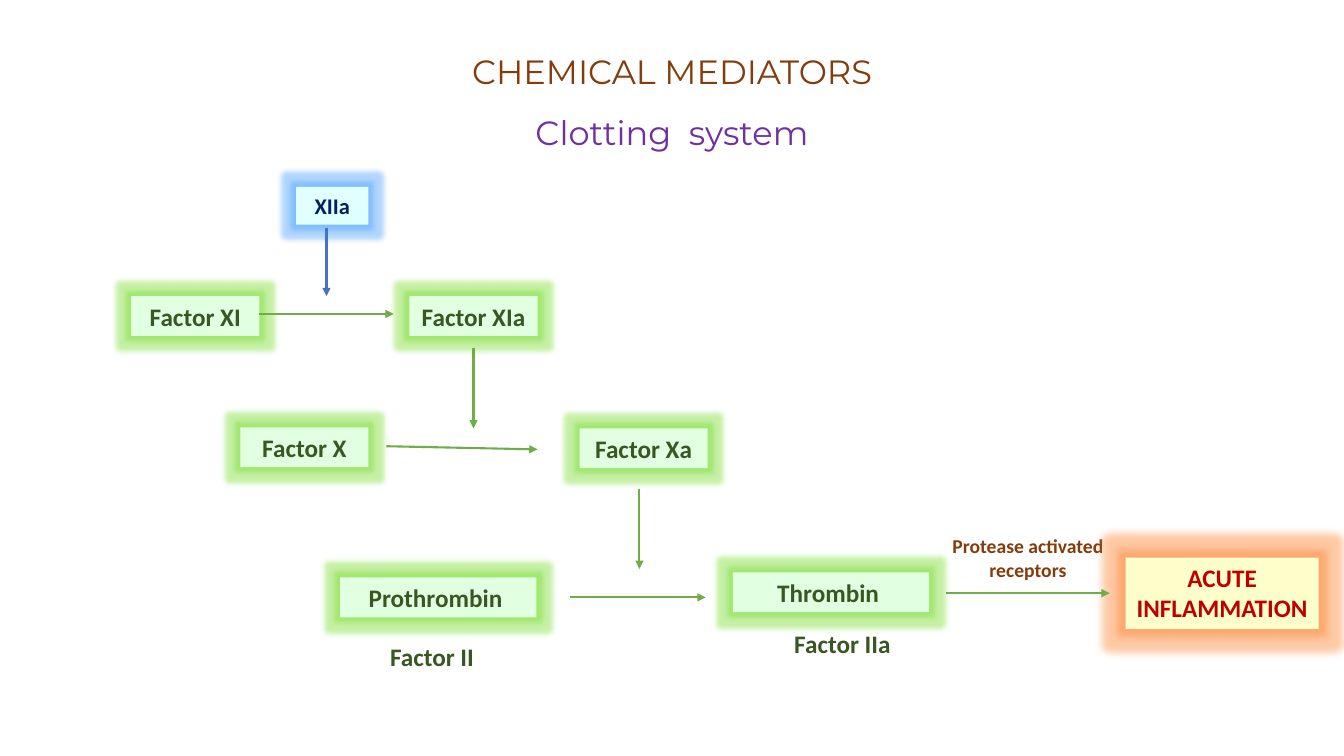
from lxml import etree
from pptx import Presentation
from pptx import util as u
from pptx.dml.color import RGBColor
from pptx.enum import shapes, text
from pptx.oxml.ns import qn

PX = 9525
GREEN, DARK_GREEN, BROWN = "70AD47", "385723", "843C0B"
FACTOR = {"fill": "E1FFE1", "ink": DARK_GREEN, "glow": "6FDB20"}
TRIGGER = {"fill": "E1FFFF", "ink": "002060", "glow": "3D9BFF", "size": 16}
RESULT = {"fill": "FFFFCC", "ink": "C00000", "glow": "FF7A1F", "reach": 15}


def px(length):
    """Turn whole pixels into EMU."""
    return u.Emu(length * PX)


def color(value):
    """Turn a hex string into a colour."""
    return RGBColor.from_string(value)


def add_span(para, words, size, ink, font="Calibri", bold=True):
    """Add one formatted run to a paragraph."""
    span = para.add_run()
    span.text = words
    span.font.size = u.Pt(size)
    span.font.name = font
    span.font.bold = bold
    span.font.color.rgb = color(ink)


def fill_frame(shape, words, size, ink, align):
    """Write one wrapped paragraph into a shape."""
    frame = shape.text_frame
    frame.word_wrap = True
    frame.auto_size = text.MSO_AUTO_SIZE.SHAPE_TO_FIT_TEXT
    frame.vertical_anchor = text.MSO_ANCHOR.TOP
    para = frame.paragraphs[0]
    para.alignment = align
    add_span(para, words, size, ink)


def add_label(page, box, words, size, ink, align=text.PP_ALIGN.LEFT):
    """Place a plain text label."""
    label = page.shapes.add_textbox(*map(px, box))
    fill_frame(label, words, size, ink, align)


def add_node(page, box, words, fill, ink, glow, size=18, reach=10):
    """Place a filled box surrounded by a soft glow."""
    node = page.shapes.add_shape(shapes.MSO_SHAPE.RECTANGLE, *map(px, box))
    node.shadow.inherit = False
    node.fill.solid()
    node.fill.fore_color.rgb = color(fill)
    node.line.fill.background()
    effects = node._element.spPr.find(qn("a:effectLst"))
    halo = etree.SubElement(effects, qn("a:glow"), rad=str(px(reach)))
    tint = etree.SubElement(halo, qn("a:srgbClr"), val=glow)
    etree.SubElement(tint, qn("a:alpha"), val="40000")
    fill_frame(node, words, size, ink, text.PP_ALIGN.CENTER)


def add_arrow(page, start, end, ink=GREEN):
    """Draw a straight arrow between two points."""
    arrow = page.shapes.add_connector(
        shapes.MSO_CONNECTOR.STRAIGHT, *map(px, (*start, *end)))
    arrow.line.color.rgb = color(ink)
    arrow.line.width = u.Pt(1.5)
    etree.SubElement(arrow.line._get_or_add_ln(), qn("a:tailEnd"), type="triangle")
    etree.SubElement(arrow._element.spPr, qn("a:effectLst"))


def add_heading(page, box):
    """Format the title placeholder as a two-line heading."""
    title = page.shapes.title
    title.left, title.top, title.width, title.height = map(px, box)
    frame = title.text_frame
    frame.word_wrap = True
    frame.auto_size = text.MSO_AUTO_SIZE.NONE
    frame.vertical_anchor = text.MSO_ANCHOR.MIDDLE
    para = frame.paragraphs[0]
    para.alignment = text.PP_ALIGN.CENTER
    para.line_spacing = 1.5
    add_span(para, "CHEMICAL MEDIATORS", 24, BROWN, "Montserrat", False)
    para.add_line_break()
    add_span(para, "Clotting  system", 24, "7030A0", "Montserrat", False)


def add_trigger(page, box):
    """Place the activating factor and its arrow down to the cascade."""
    left, top, width, height = box
    add_node(page, box, "XIIa", **TRIGGER)
    add_arrow(page, (left + 29, top + 39), (left + 29, top + 104), "4472C4")


def add_cascade(page, box):
    """Place the three activation steps and the arrows joining them."""
    left, top, width, height = box
    factors = [
        ("Factor XI", 0, 0, 122), ("Factor XIa", 265, 0, 122),
        ("Factor X", 104, 125, 122), ("Factor Xa", 427, 126, 122),
        ("Prothrombin ", 199, 268, 187), ("Thrombin ", 573, 263, 187),
    ]
    for words, x, y, wide in factors:
        add_node(page, (left + x, top + y, wide, 38), words, **FACTOR)
    arrows = [
        (122, 17, 250, 17), (243, 143, 387, 146), (418, 287, 547, 287),
        (326, 49, 326, 126), (484, 184, 484, 260),
    ]
    for x1, y1, x2, y2 in arrows:
        add_arrow(page, (left + x1, top + y1), (left + x2, top + y2))
    for words, x, y in [("Factor II", 237, 324), ("Factor IIa", 622, 312)]:
        add_label(page, (left + x, top + y, 151, 38), words, 18, DARK_GREEN)


def add_outcome(page, box):
    """Place the receptor step leading to inflammation."""
    left, top, width, height = box
    add_label(page, (left, top, 210, 55), "Protease activated receptors",
              14, BROWN, text.PP_ALIGN.CENTER)
    add_node(page, (left + width - 184, top + height - 68, 184, 68),
             "ACUTE INFLAMMATION ", **RESULT)
    add_arrow(page, (left + 27, top + 61), (left + 183, top + 61))


def main():
    """Build and save the slide."""
    deck = Presentation()
    deck.slide_width, deck.slide_height = px(1280), px(720)
    page = deck.slides.add_slide(deck.slide_layouts[5])
    add_heading(page, (88, 32, 1104, 110))
    add_trigger(page, (282, 178, 69, 36))
    add_cascade(page, (125, 282, 760, 362))
    add_outcome(page, (874, 504, 382, 95))
    deck.save("out.pptx")


if __name__ == "__main__":
    main()
